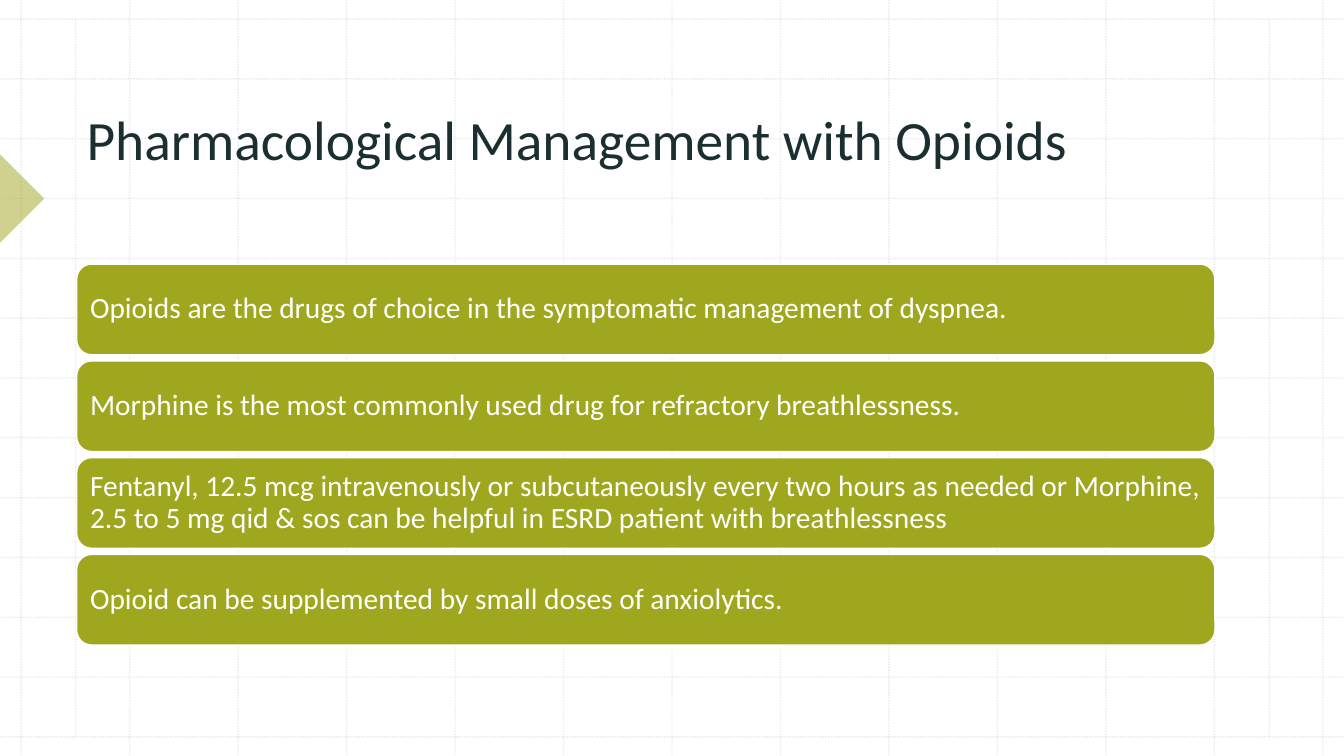
from dataclasses import dataclass

from lxml import etree
from pptx import Presentation
from pptx.dml.color import RGBColor
from pptx.enum.dml import MSO_LINE
from pptx.enum.shapes import MSO_CONNECTOR, MSO_SHAPE
from pptx.enum.text import MSO_ANCHOR, PP_ALIGN
from pptx.oxml.ns import qn
from pptx.slide import Slide
from pptx.text.text import TextFrame
from pptx.util import Inches, Pt

STRAIGHT = MSO_CONNECTOR.STRAIGHT
ROUNDED = MSO_SHAPE.ROUNDED_RECTANGLE
RIGHT_TRIANGLE = MSO_SHAPE.RIGHT_TRIANGLE
DOTTED = MSO_LINE.ROUND_DOT
LEFT = PP_ALIGN.LEFT
MIDDLE, BOTTOM = MSO_ANCHOR.MIDDLE, MSO_ANCHOR.BOTTOM

WHITE = RGBColor(0xFF, 0xFF, 0xFF)
GRAY = RGBColor(0xBC, 0xBC, 0xBC)
OLIVE = RGBColor(0x9F, 0xA7, 0x1E)
DARK_TEAL = RGBColor(0x1B, 0x2F, 0x30)

FONT = "Calibri"
WIDTH, HEIGHT = 13.33, 7.5
GRID_STEPS = 12
GRID_LEFT, GRID_RIGHT = 0.21, 13.12
GRID_TOP, GRID_BOTTOM = 0.19, 7.31
MARGIN_LINES = (0.75, 12.59)
CONTENT_LEFT, CONTENT_WIDTH = 0.76, 11.29
CARD_TOP, CARD_HEIGHT, CARD_PITCH = 2.62, 0.9, 0.96

TITLE = "Pharmacological Management with Opioids"
CARD_TEXTS = (
    "Opioids are the drugs of choice in the symptomatic management of dyspnea.",
    "Morphine is the most commonly used drug for refractory breathlessness.",
    "Fentanyl, 12.5 mcg intravenously or subcutaneously every two hours as needed "
    "or Morphine, 2.5 to 5 mg qid & sos can be helpful in ESRD patient with breathlessness",
    "Opioid can be supplemented by small doses of anxiolytics.",
)


@dataclass
class GridLine:
    x1: float
    y1: float
    x2: float
    y2: float


@dataclass
class Card:
    top: float
    text: str


def set_alpha(element: etree._Element, percent: int) -> None:
    """Make the solid colour inside the element partly transparent."""
    color = next(element.iter(qn("a:srgbClr")))
    etree.SubElement(color, qn("a:alpha")).set("val", str(percent * 1000))


def draw_grid_line(slide: Slide, grid_line: GridLine) -> None:
    connector = slide.shapes.add_connector(
        STRAIGHT, Inches(grid_line.x1), Inches(grid_line.y1),
        Inches(grid_line.x2), Inches(grid_line.y2))
    connector.line.color.rgb = GRAY
    connector.line.width = Pt(1)
    connector.line.dash_style = DOTTED
    properties = connector._element.spPr
    set_alpha(properties, 30)
    etree.SubElement(properties, qn("a:effectLst"))


def draw_grid(slide: Slide) -> None:
    column_step = (GRID_RIGHT - GRID_LEFT) / GRID_STEPS
    row_step = (GRID_BOTTOM - GRID_TOP) / GRID_STEPS
    columns = [GRID_LEFT + index * column_step for index in range(GRID_STEPS + 1)]
    rows = [GRID_TOP + index * row_step for index in range(GRID_STEPS + 1)]
    grid_lines = [GridLine(x, 0, x, HEIGHT) for x in columns]
    grid_lines += [GridLine(0, y, WIDTH, y) for y in rows]
    grid_lines += [GridLine(x, GRID_TOP, x, GRID_BOTTOM) for x in MARGIN_LINES]
    for grid_line in grid_lines:
        draw_grid_line(slide, grid_line)


def draw_marker(slide: Slide) -> None:
    """Draw the translucent arrow tip at the left edge."""
    shape = slide.shapes.add_shape(
        RIGHT_TRIANGLE, Inches(-0.31), Inches(1.66), Inches(0.62), Inches(0.62))
    shape.rotation = 225
    shape.shadow.inherit = False
    shape.fill.solid()
    shape.fill.fore_color.rgb = OLIVE
    set_alpha(shape._element.spPr, 50)
    shape.line.fill.background()


def write_text(frame: TextFrame, text: str, size: float, color: RGBColor) -> None:
    frame.word_wrap = True
    paragraph = frame.paragraphs[0]
    paragraph.alignment = LEFT
    paragraph.line_spacing = 0.9
    run = paragraph.add_run()
    run.text = text
    run.font.name = FONT
    run.font.size = Pt(size)
    run.font.color.rgb = color


def draw_title(slide: Slide) -> None:
    box = slide.shapes.add_textbox(
        Inches(CONTENT_LEFT), Inches(0.79), Inches(CONTENT_WIDTH), Inches(1.58))
    frame = box.text_frame
    frame.vertical_anchor = BOTTOM
    frame.margin_bottom = Inches(0.66)
    write_text(frame, TITLE, 39.6, DARK_TEAL)


def draw_card(slide: Slide, card: Card) -> None:
    shape = slide.shapes.add_shape(
        ROUNDED, Inches(CONTENT_LEFT), Inches(card.top),
        Inches(CONTENT_WIDTH), Inches(CARD_HEIGHT))
    shape.shadow.inherit = False
    shape.fill.solid()
    shape.fill.fore_color.rgb = OLIVE
    shape.line.color.rgb = WHITE
    shape.line.width = Pt(1)
    frame = shape.text_frame
    frame.vertical_anchor = MIDDLE
    frame.margin_left = frame.margin_right = Inches(0.09)
    frame.margin_top = frame.margin_bottom = Inches(0.09)
    write_text(frame, card.text, 21, WHITE)


def main() -> None:
    presentation = Presentation()
    presentation.slide_width = Inches(WIDTH)
    presentation.slide_height = Inches(HEIGHT)
    slide = presentation.slides.add_slide(presentation.slide_layouts[6])
    draw_grid(slide)
    draw_marker(slide)
    draw_title(slide)
    for index, text in enumerate(CARD_TEXTS):
        draw_card(slide, Card(CARD_TOP + index * CARD_PITCH, text))
    presentation.save("out.pptx")


if __name__ == "__main__":
    main()
